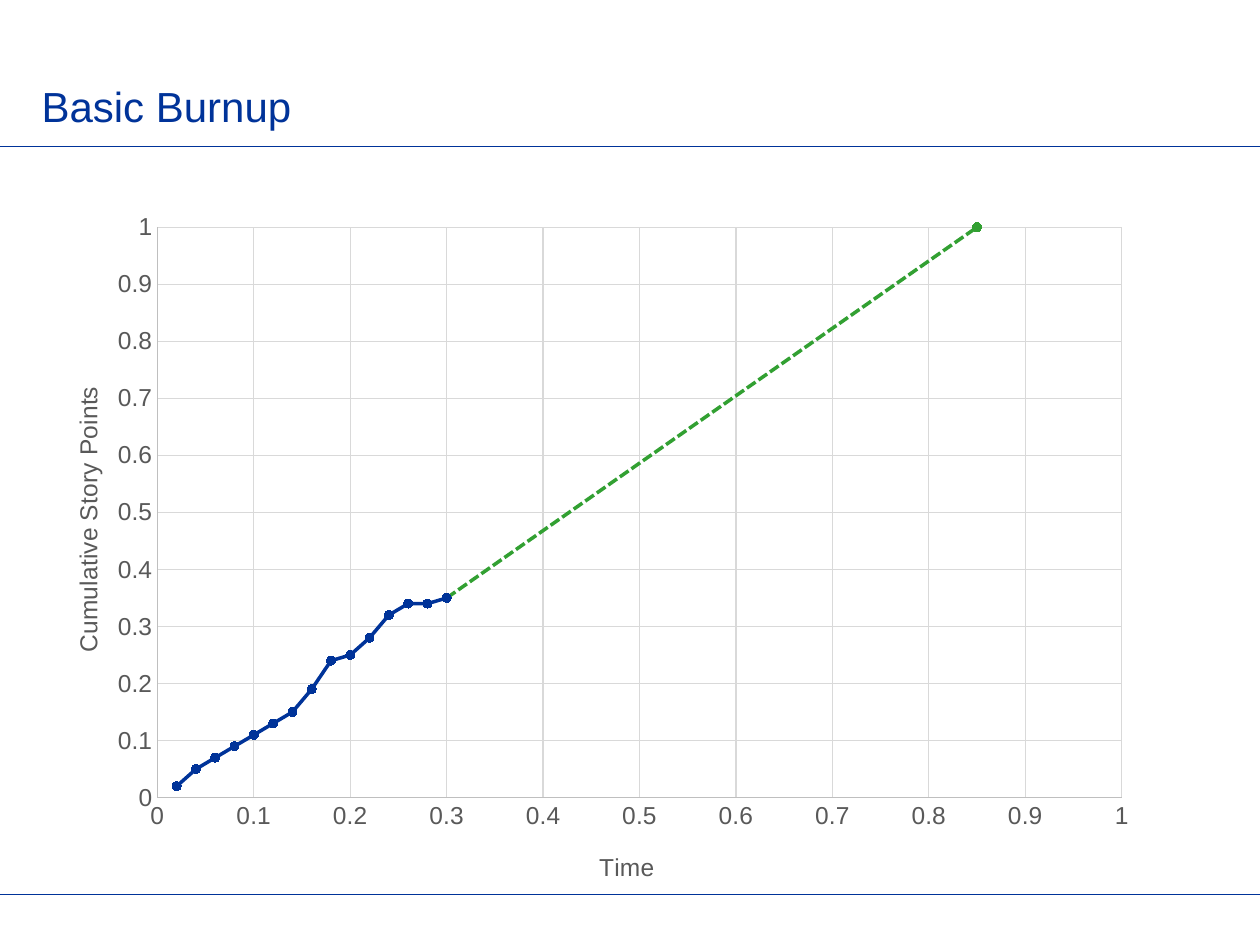
import pptx
import pptx.chart.data
import pptx.dml.color
import pptx.enum.chart
import pptx.enum.dml
import pptx.enum.shapes
import pptx.enum.text
import pptx.oxml
import pptx.oxml.ns
import pptx.util
from pptx.util import Inches, Pt

FONT = "Arial"
BLUE, GREEN = "003399", "32A032"
GREY, AXIS, GRID = "595959", "BFBFBF", "D9D9D9"

HEADING = "Basic Burnup"
RULE_HEIGHTS = [1.16, 7.1]
COMPLETED = [0.02, 0.05, 0.07, 0.09, 0.11, 0.13, 0.15, 0.19,
             0.24, 0.25, 0.28, 0.32, 0.34, 0.34, 0.35]
BURNUP = [
    {"name": "Series 1", "color": BLUE, "dash": None,
     "points": [(round(0.02 * step, 2), done)
                for step, done in enumerate(COMPLETED, 1)]},
    {"name": "Series 2", "color": GREEN,
     "dash": pptx.enum.dml.MSO_LINE.SQUARE_DOT,
     "points": [(0.3, 0.35), (0.85, 1)]},
]
# Positions and sizes as fractions of the chart frame
PLOT_LAYOUT = {"x": 0.11, "y": 0.04, "w": 0.86, "h": 0.81}
AXIS_TITLES = {
    "category_axis": ("Time", {"x": 0.5, "y": 0.92}),
    "value_axis": ("Cumulative Story Points", {"x": 0.03, "y": 0.26}),
}


def rgb(color):
    return pptx.dml.color.RGBColor.from_string(color)


def set_font(font, size, color):
    font.name, font.size, font.bold = FONT, Pt(size), False
    font.color.rgb = rgb(color)


def write(frame, text, *, size, color):
    frame.text = text
    set_font(frame.paragraphs[0].runs[0].font, size, color)


def set_line(line, color, width):
    line.color.rgb = rgb(color)
    line.width = Pt(width)


def add_rule(slide, height):
    rule = slide.shapes.add_connector(
        pptx.enum.shapes.MSO_CONNECTOR.STRAIGHT,
        Inches(0), Inches(height), Inches(10), Inches(height))
    set_line(rule.line, BLUE, 0.5)
    properties = rule._element.spPr
    properties.append(pptx.oxml.parse_xml(
        f"<a:effectLst {pptx.oxml.ns.nsdecls('a')}/>"))


def make_layout(fractions, target=""):
    """Return a c:layout element that fixes a chart part in place."""
    modes = "".join(f'<c:{key}Mode val="edge"/>' for key in "xy")
    values = "".join(f'<c:{key} val="{value}"/>'
                     for key, value in fractions.items())
    return pptx.oxml.parse_xml(
        f"<c:layout {pptx.oxml.ns.nsdecls('c')}><c:manualLayout>"
        f"{target}{modes}{values}</c:manualLayout></c:layout>")


def remove_layout(part):
    for layout in part.findall(pptx.oxml.ns.qn("c:layout")):
        part.remove(layout)


def format_axis(axis, title, position):
    axis.minimum_scale, axis.maximum_scale, axis.major_unit = 0, 1, 0.1
    axis.major_tick_mark = axis.minor_tick_mark = pptx.enum.chart.XL_TICK_MARK.NONE
    axis.has_major_gridlines = True
    set_line(axis.major_gridlines.format.line, GRID, 0.75)
    set_line(axis.format.line, AXIS, 0.75)
    set_font(axis.tick_labels.font, 14, GREY)
    axis.tick_labels.number_format = "General"
    axis.tick_labels.number_format_is_linked = False
    write(axis.axis_title.text_frame, title, size=14, color=GREY)
    title_xml = axis.axis_title._element
    remove_layout(title_xml)
    title_xml.find(pptx.oxml.ns.qn("c:tx")).addnext(make_layout(position))


def add_burnup(slide):
    data = pptx.chart.data.XyChartData()
    for burnup in BURNUP:
        series = data.add_series(burnup["name"])
        for time, points in burnup["points"]:
            series.add_data_point(time, points)
    chart = slide.shapes.add_chart(
        pptx.enum.chart.XL_CHART_TYPE.XY_SCATTER_LINES,
        Inches(0.27), Inches(1.58), Inches(8.9), Inches(5.59), data).chart
    chart.has_title = chart.has_legend = False
    set_font(chart.font, 14, "000000")
    chart.plots[0].vary_by_categories = False

    for axis_name, (title, position) in AXIS_TITLES.items():
        format_axis(getattr(chart, axis_name), title, position)

    # Draw the projection first so the completed work sits on top at the join
    for series, burnup in zip(chart.plots[0].series, BURNUP):
        series.smooth = False
        set_line(series.format.line, burnup["color"], 2)
        if burnup["dash"]:
            series.format.line.dash_style = burnup["dash"]
        series.marker.style = pptx.enum.chart.XL_MARKER_STYLE.CIRCLE
        series.marker.size = 5
        series.marker.format.fill.solid()
        series.marker.format.fill.fore_color.rgb = rgb(burnup["color"])
        set_line(series.marker.format.line, burnup["color"], 0.75)

    plot_area = chart._chartSpace.chart.plotArea
    remove_layout(plot_area)
    plot_area.insert(0, make_layout(PLOT_LAYOUT, '<c:layoutTarget val="inner"/>'))


def main():
    deck = pptx.Presentation()
    deck.slide_width, deck.slide_height = Inches(10), Inches(7.5)
    slide = deck.slides.add_slide(deck.slide_layouts[5])

    for height in RULE_HEIGHTS:
        add_rule(slide, height)

    heading = slide.shapes.title
    heading.left, heading.top = Inches(0.23), Inches(0.15)
    heading.width, heading.height = Inches(8.28), Inches(0.94)
    write(heading.text_frame, HEADING, size=24, color=BLUE)
    heading.text_frame.vertical_anchor = pptx.enum.text.MSO_ANCHOR.BOTTOM
    heading.text_frame.paragraphs[0].alignment = pptx.enum.text.PP_ALIGN.LEFT

    add_burnup(slide)
    deck.save("out.pptx")


if __name__ == "__main__":
    main()
